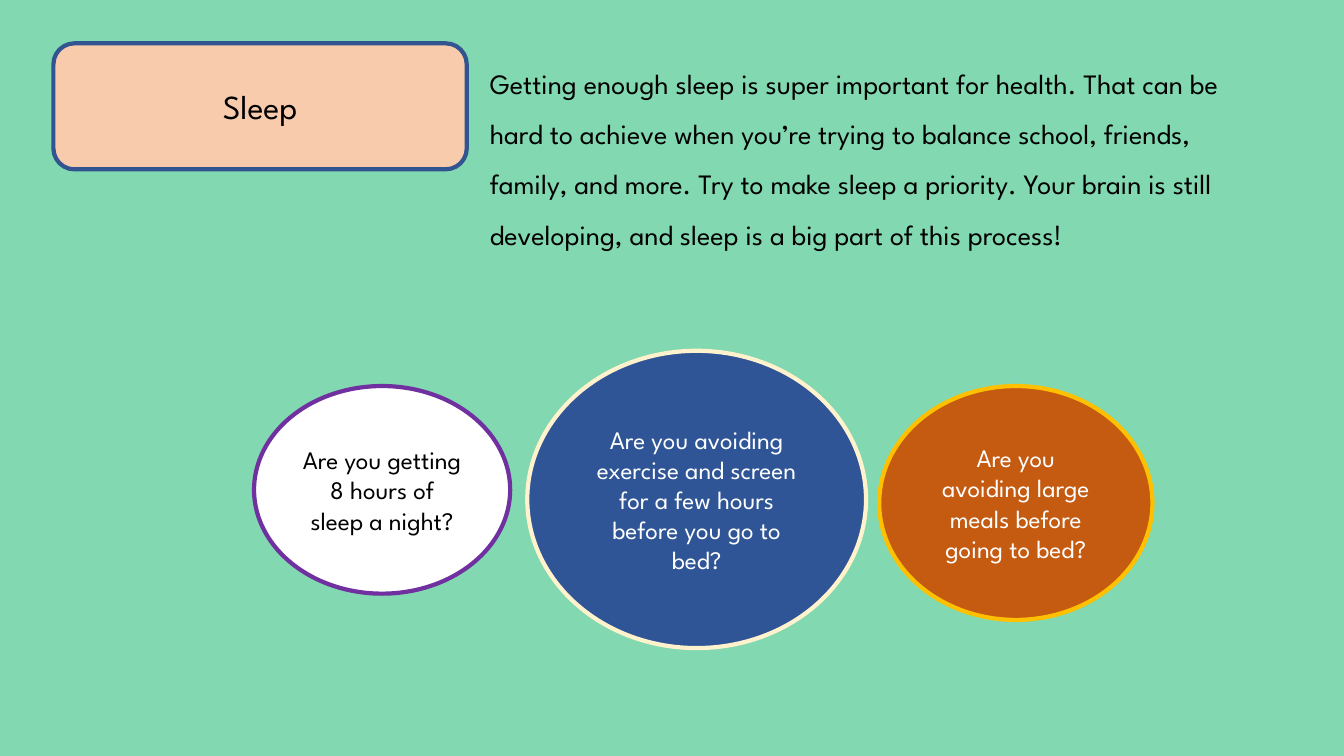
from dataclasses import dataclass

import pptx
import pptx.dml.color
import pptx.enum.shapes
import pptx.enum.text
import pptx.util

COLORS = {
    "mint": "82D8B0",
    "navy": "2F5597",
    "cream": "FFF2CC",
    "rust": "C55A11",
    "gold": "FFC000",
    "white": "FFFFFF",
    "purple": "7030A0",
    "peach": "F8CBAD",
    "indigo": "325491",
    "black": "000000",
}
FONT = "League Spartan"
SLIDE_WIDTH = pptx.util.Inches(13.33)
SLIDE_HEIGHT = pptx.util.Inches(7.5)
COLUMN = SLIDE_WIDTH / 133.3
ROW = SLIDE_HEIGHT / 75
OVAL = pptx.enum.shapes.MSO_SHAPE.OVAL
ROUNDED = pptx.enum.shapes.MSO_SHAPE.ROUNDED_RECTANGLE


@dataclass(frozen=True)
class Area:
    column: float
    row: float
    columns: float
    rows: float

    def box(self) -> tuple[int, int, int, int]:
        return (round(self.column * COLUMN), round(self.row * ROW),
                round(self.columns * COLUMN), round(self.rows * ROW))


@dataclass(frozen=True)
class Bubble:
    words: str
    area: Area
    fill: str
    outline: str
    ink: str
    size: int = 18
    outer: pptx.enum.shapes.MSO_SHAPE = OVAL


BUBBLES = [
    Bubble("Are you avoiding exercise and screen for a few hours before you go to bed?",
           Area(52.3, 34.8, 33.6, 29.5), "navy", "cream", "white"),
    Bubble("Are you avoiding large meals before going to bed?",
           Area(87.2, 38.3, 27.1, 23.2), "rust", "gold", "white"),
    Bubble("Are you getting 8 hours of sleep a night?",
           Area(25.2, 38.3, 25.4, 20.6), "white", "purple", "black"),
    Bubble("Sleep", Area(5.3, 4.3, 41, 12.5), "peach", "indigo", "black", 24, ROUNDED),
]
ADVICE = (
    "Getting enough sleep is super important for health. That can be hard to achieve "
    "when you’re trying to balance school, friends, family, and more. Try to make sleep "
    "a priority. Your brain is still developing, and sleep is a big part of this process!"
)
ADVICE_AREA = Area(47.6, 4.4, 79.2, 25.6)


def color(name: str) -> pptx.dml.color.RGBColor:
    return pptx.dml.color.RGBColor.from_string(COLORS[name])


def write(frame, words: str, size: int, ink: str):
    frame.word_wrap = True
    paragraph = frame.paragraphs[0]
    paragraph.text = words
    paragraph.font.name = FONT
    paragraph.font.size = pptx.util.Pt(size)
    paragraph.font.color.rgb = color(ink)
    return paragraph


def draw_bubble(slide, bubble: Bubble) -> None:
    outer = slide.shapes.add_shape(bubble.outer, *bubble.area.box())
    outer.shadow.inherit = False
    outer.fill.solid()
    outer.fill.fore_color.rgb = color(bubble.fill)
    outer.line.color.rgb = color(bubble.outline)
    outer.line.width = pptx.util.Pt(3)
    outer.text_frame.vertical_anchor = pptx.enum.text.MSO_ANCHOR.MIDDLE
    question = write(outer.text_frame, bubble.words, bubble.size, bubble.ink)
    question.alignment = pptx.enum.text.PP_ALIGN.CENTER


def draw_advice(slide) -> None:
    advice = slide.shapes.add_textbox(*ADVICE_AREA.box())
    advice.text_frame.auto_size = pptx.enum.text.MSO_AUTO_SIZE.SHAPE_TO_FIT_TEXT
    write(advice.text_frame, ADVICE, 20, "black").line_spacing = 1.5


def main() -> None:
    deck = pptx.Presentation()
    deck.slide_width = SLIDE_WIDTH
    deck.slide_height = SLIDE_HEIGHT
    slide = deck.slides.add_slide(deck.slide_layouts[6])
    slide.background.fill.solid()
    slide.background.fill.fore_color.rgb = color("mint")
    for bubble in BUBBLES:
        draw_bubble(slide, bubble)
    draw_advice(slide)
    deck.save("out.pptx")


if __name__ == "__main__":
    main()
